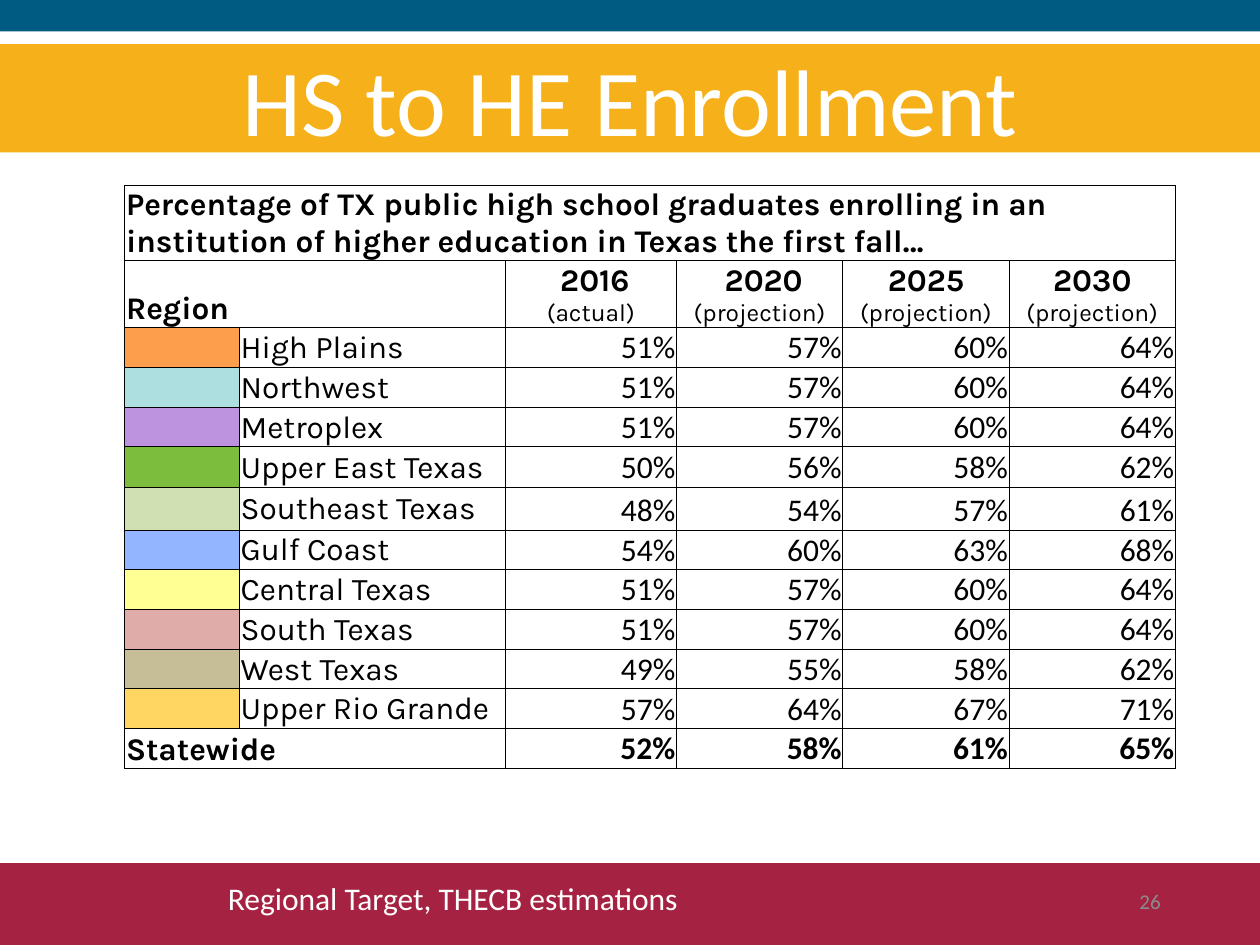
from lxml import etree
from pptx import Presentation
from pptx.dml.color import RGBColor
from pptx.enum.shapes import MSO_SHAPE as SHAPE
from pptx.enum.text import MSO_ANCHOR as ANCHOR, PP_ALIGN as ALIGN
from pptx.oxml import parse_xml
from pptx.util import Inches, Pt

NS = "http://schemas.openxmlformats.org/drawingml/2006/main"


def color(hex_value):
    return RGBColor.from_string(hex_value)


def add_run(paragraph, text, size, font="Calibri", ink="000000", bold=False):
    run = paragraph.add_run()
    run.text = text
    run.font.size = Pt(size)
    run.font.name = font
    run.font.bold = bold
    run.font.color.rgb = color(ink)


"""Build the slide on enrollment in higher education by Texas region."""
prs = Presentation()
prs.slide_width, prs.slide_height = Inches(10), Inches(7.5)
slide = prs.slides.add_slide(prs.slide_layouts[6])

for top, height, band_color, title in [
    (6.85, 0.67, "A62242", ""),
    (0, 0.25, "005B83", ""),
    (0.35, 0.86, "F6B11A", "HS to HE Enrollment"),
]:
    band = slide.shapes.add_shape(SHAPE.RECTANGLE, 0, Inches(top), Inches(10), Inches(height))
    band.shadow.inherit = False
    band.fill.solid()
    band.fill.fore_color.rgb = color(band_color)
    band.line.fill.background()
    if title:
        band.text_frame.vertical_anchor = ANCHOR.MIDDLE
        heading = band.text_frame.paragraphs[0]
        heading.alignment = ALIGN.CENTER
        add_run(heading, title, 54, ink="FFFFFF")

regions = [
    ("High Plains", "FC9E4C", (51, 57, 60, 64)),
    ("Northwest", "AEDFE0", (51, 57, 60, 64)),
    ("Metroplex", "BD92DE", (51, 57, 60, 64)),
    ("Upper East Texas", "7DBD3D", (50, 56, 58, 62)),
    ("Southeast Texas", "D1E0B2", (48, 54, 57, 61)),
    ("Gulf Coast", "93B5FF", (54, 60, 63, 68)),
    ("Central Texas", "FFFF93", (51, 57, 60, 64)),
    ("South Texas", "DFACA9", (51, 57, 60, 64)),
    ("West Texas", "C5BE97", (49, 55, 58, 62)),
    ("Upper Rio Grande", "FFD661", (57, 64, 67, 71)),
    ("Statewide", None, (52, 58, 61, 65)),
]
column_widths = [0.91, 2.11, 1.36, 1.32, 1.32, 1.32]
row_heights = [0.6, 0.53] + [0.31] * 3 + [0.32, 0.34] + [0.31] * 6

enrollment = slide.shapes.add_table(
    len(row_heights), len(column_widths),
    Inches(0.99), Inches(1.47), Inches(sum(column_widths)), Inches(sum(row_heights)),
).table
enrollment.first_row = enrollment.horz_banding = False
for column, width in zip(enrollment.columns, column_widths):
    column.width = Inches(width)
for row, height in zip(enrollment.rows, row_heights):
    row.height = Inches(height)

for cell in enrollment.iter_cells():
    cell.margin_left = cell.margin_right = cell.margin_top = Inches(0.01)
    cell.margin_bottom = 0
    cell.vertical_anchor = ANCHOR.BOTTOM
    borders = parse_xml(
        f'<a:tcPr xmlns:a="{NS}">'
        + "".join(
            f'<a:{side} w="{Pt(0.5)}"><a:solidFill><a:srgbClr val="000000"/></a:solidFill></a:{side}>'
            for side in ("lnL", "lnR", "lnT", "lnB")
        )
        + "</a:tcPr>"
    )
    cell_properties = cell._tc.find(etree.QName(NS, "tcPr").text)
    cell_properties.extend(list(borders))
    cell.fill.background()

last_row = len(row_heights) - 1
enrollment.cell(0, 0).merge(enrollment.cell(0, 5))
for row_index in (1, last_row):
    enrollment.cell(row_index, 0).merge(enrollment.cell(row_index, 1))

caption = ("Percentage of TX public high school graduates enrolling in an "
           "institution of higher education in Texas the first fall…")
for row_index, text in enumerate([caption, "Region"]):
    label = enrollment.cell(row_index, 0).text_frame.paragraphs[0]
    add_run(label, text, 18, "Karla", bold=True)

years = [(" 2016", "(actual)"), (" 2020", "(projection)"),
         ("2025 ", "(projection)"), ("2030 ", "(projection)")]
for column_index, (year, status) in enumerate(years, start=2):
    year_frame = enrollment.cell(1, column_index).text_frame
    year_line = year_frame.paragraphs[0]
    year_line.alignment = ALIGN.CENTER
    add_run(year_line, year, 18, "Karla", bold=True)
    status_line = year_line if year.endswith(" ") else year_frame.add_paragraph()
    status_line.alignment = ALIGN.CENTER
    add_run(status_line, status, 14, "Karla")

for row_index, (region, swatch, rates) in enumerate(regions, start=2):
    statewide = swatch is None
    name_cell = enrollment.cell(row_index, 0 if statewide else 1)
    add_run(name_cell.text_frame.paragraphs[0], region, 18, "Karla", bold=statewide)
    if not statewide:
        name_cell.vertical_anchor = ANCHOR.MIDDLE
        swatch_fill = enrollment.cell(row_index, 0).fill
        swatch_fill.solid()
        swatch_fill.fore_color.rgb = color(swatch)
    for column_index, rate in enumerate(rates, start=2):
        rate_line = enrollment.cell(row_index, column_index).text_frame.paragraphs[0]
        rate_line.alignment = ALIGN.RIGHT
        add_run(rate_line, f"{rate}%", 18, bold=statewide)

for left, top, width, text, size, ink, align, anchor in [
    (1.71, 6.93, 6.59, "Regional Target, THECB estimations", 18, "FFFFFF", ALIGN.LEFT, ANCHOR.TOP),
    (7.06, 6.95, 2.25, "26", 12, "8C8C8C", ALIGN.RIGHT, ANCHOR.MIDDLE),
]:
    footer = slide.shapes.add_textbox(Inches(left), Inches(top), Inches(width), Inches(0.4)).text_frame
    footer.word_wrap = True
    footer.vertical_anchor = anchor
    footer.paragraphs[0].alignment = align
    add_run(footer.paragraphs[0], text, size, ink=ink)

prs.save("out.pptx")
